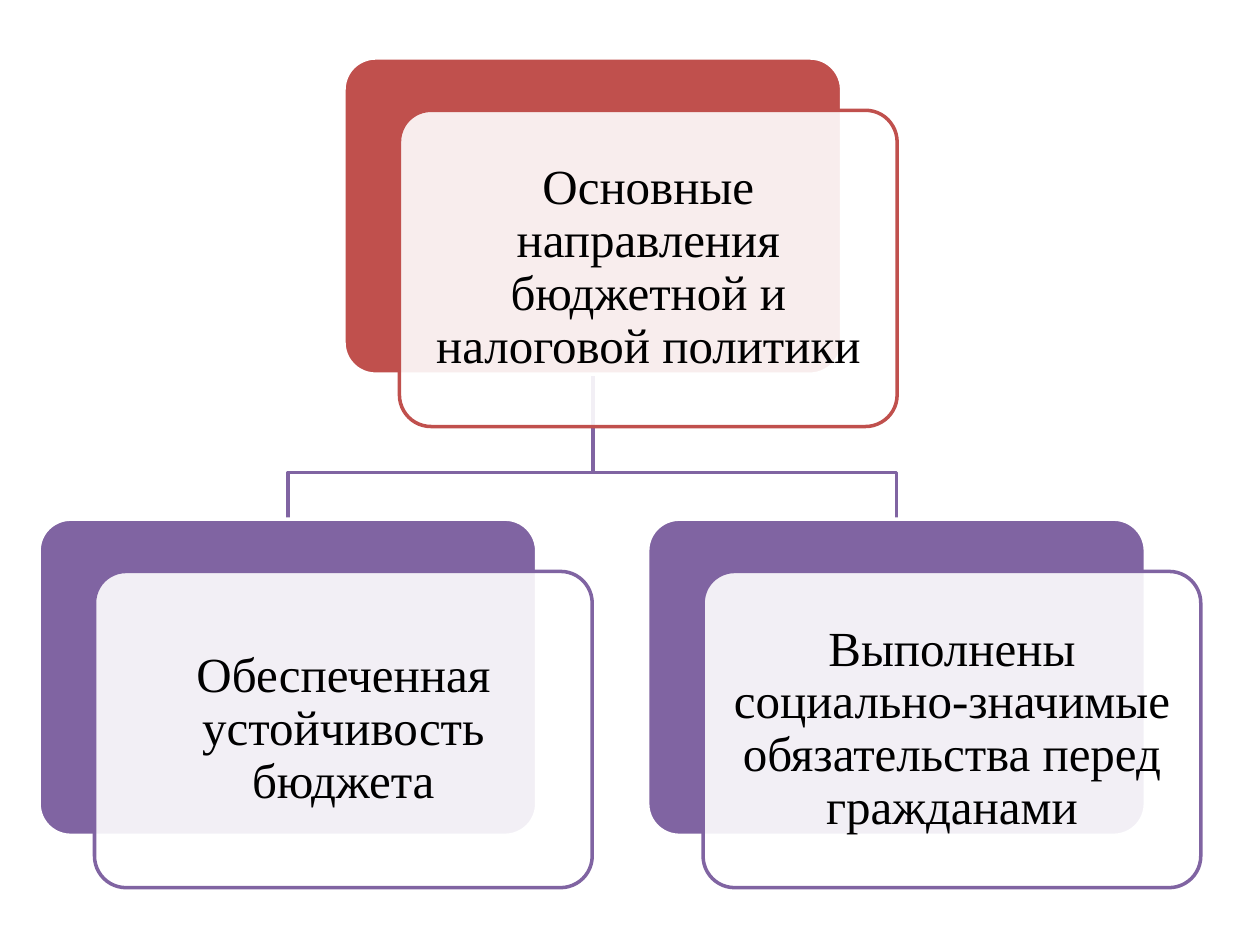
from lxml import etree
from pptx import Presentation
from pptx.dml.color import RGBColor
from pptx.enum.shapes import MSO_SHAPE
from pptx.enum.text import MSO_ANCHOR, PP_ALIGN
from pptx.oxml.ns import qn
from pptx.util import Inches, Pt

ROUNDED = MSO_SHAPE.ROUNDED_RECTANGLE
MIDDLE, CENTER = MSO_ANCHOR.MIDDLE, PP_ALIGN.CENTER
COLORS = {"red": "C0504D", "purple": "8064A2", "white": "FFFFFF", "black": "000000"}

CARD_W, CARD_H = 3.95, 2.51
SHIFT_X, SHIFT_Y = 0.44, 0.415   # offset of the front card from the back one
ROOT_X, ROOT_Y = 2.73, 0.46
CHILD_Y, BRANCH_Y = 4.12, 3.75

# left, top, color, text
CARDS = [
    (ROOT_X, ROOT_Y, "red", "Основные направления бюджетной и налоговой политики"),
    (0.31, CHILD_Y, "purple", "Обеспеченная устойчивость бюджета"),
    (5.14, CHILD_Y, "purple", "Выполнены социально-значимые обязательства перед гражданами"),
]


def rgb(name):
    return RGBColor.from_string(COLORS[name])


def add_card(x, y, fill, line):
    sp = s.shapes.add_shape(ROUNDED, Inches(x), Inches(y), Inches(CARD_W), Inches(CARD_H))
    sp.adjustments[0] = 0.1
    sp.shadow.inherit = False
    sp.fill.solid()
    sp.fill.fore_color.rgb = rgb(fill)
    sp.line.color.rgb = rgb(line)
    sp.line.width = Pt(2)
    return sp


prs = Presentation()
prs.slide_width, prs.slide_height = Inches(10), Inches(7.5)
s = prs.slides.add_slide(prs.slide_layouts[6])

# Branches from the root card to its children
root_mid, root_bottom = ROOT_X + CARD_W / 2, ROOT_Y + CARD_H
for x, *_ in reversed(CARDS[1:]):
    child_mid = x + CARD_W / 2
    fb = s.shapes.build_freeform(Inches(root_mid), Inches(root_bottom))
    fb.add_line_segments([
        (Inches(root_mid), Inches(BRANCH_Y)),
        (Inches(child_mid), Inches(BRANCH_Y)),
        (Inches(child_mid), Inches(CHILD_Y)),
    ], close=False)
    sp = fb.convert_to_shape()
    sp.shadow.inherit = False
    sp.fill.background()
    sp.line.color.rgb = rgb("purple")
    sp.line.width = Pt(2)

# Cards: solid back, translucent front with text
for x, y, color, text in CARDS:
    add_card(x, y, color, "white")
    sp = add_card(x + SHIFT_X, y + SHIFT_Y, "white", color)
    clr = sp.fill._xPr.find(qn("a:solidFill"))[0]
    etree.SubElement(clr, qn("a:alpha"), val="90000")

    tf = sp.text_frame
    tf.word_wrap = True
    tf.vertical_anchor = MIDDLE
    tf.margin_left = tf.margin_right = tf.margin_top = tf.margin_bottom = Inches(0.12)
    p = tf.paragraphs[0]
    p.alignment = CENTER
    p.line_spacing = 0.9
    r = p.add_run()
    r.text = text
    r.font.name = "Times New Roman"
    r.font.size = Pt(28)
    r.font.color.rgb = rgb("black")

prs.save("out.pptx")
